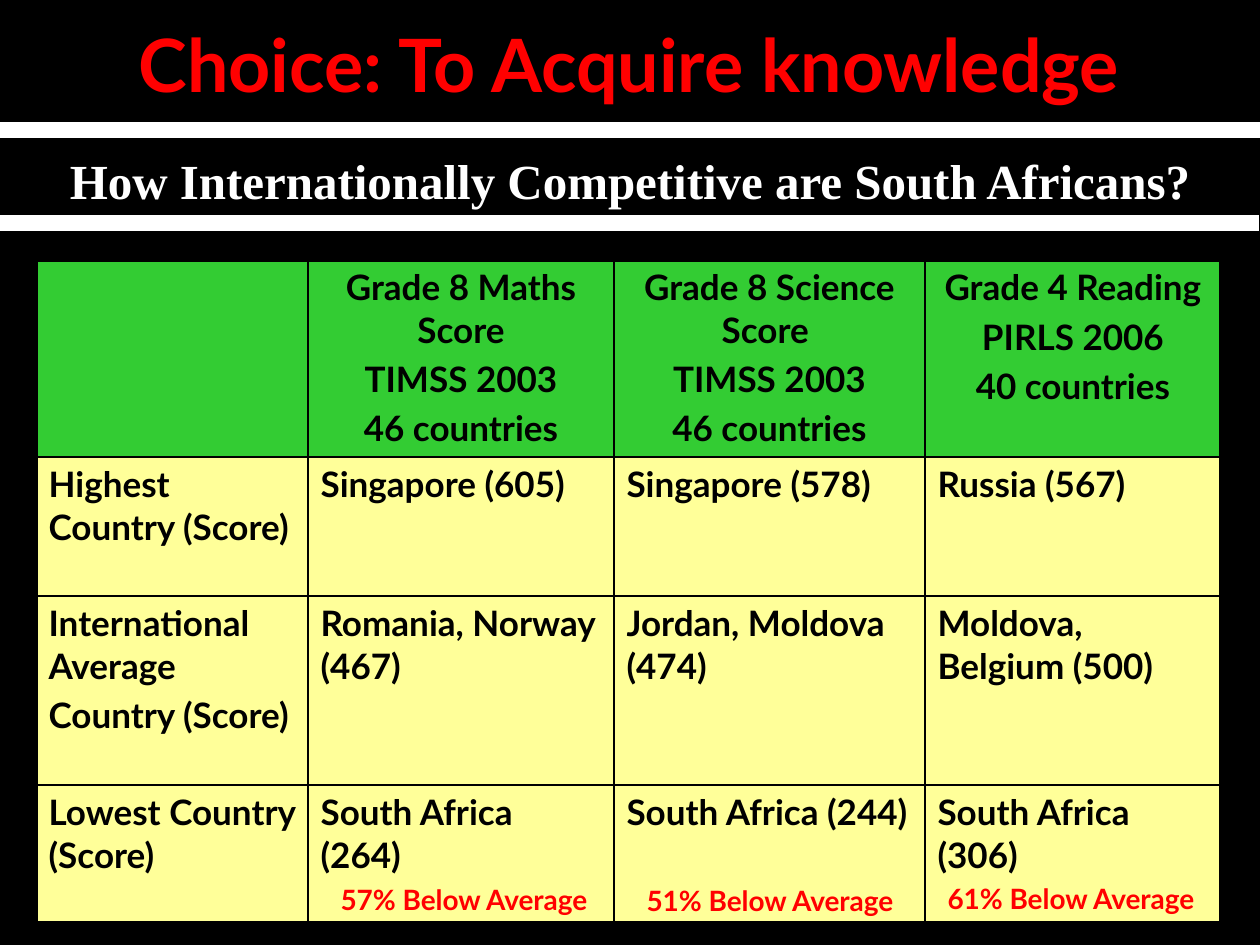
from lxml import etree
from pptx import Presentation
from pptx.dml.color import RGBColor
from pptx.enum.shapes import MSO_CONNECTOR
from pptx.enum.text import MSO_ANCHOR, PP_ALIGN
from pptx.oxml.ns import qn
from pptx.util import Emu, Pt

LEFT, CENTER = PP_ALIGN.LEFT, PP_ALIGN.CENTER
TOP, MIDDLE = MSO_ANCHOR.TOP, MSO_ANCHOR.MIDDLE
STRAIGHT = MSO_CONNECTOR.STRAIGHT
PX = 914400 / 126
COLORS = {
    "black": "000000",
    "white": "FFFFFF",
    "red": "FF0000",
    "green": "33CC33",
    "yellow": "FFFF99",
}
COLUMN_WIDTHS = [272, 306, 311, 296]
ROW_HEIGHTS = [197, 139, 189, 138]
SCORES = [
    ["", "Grade 8 Maths Score\nTIMSS 2003\n46 countries",
     "Grade 8 Science Score \nTIMSS 2003\n46 countries",
     "Grade 4 Reading\nPIRLS 2006\n40 countries"],
    ["Highest Country (Score)", "Singapore (605)", "Singapore (578)",
     "Russia (567)"],
    ["International Average\nCountry (Score)", "Romania, Norway (467)",
     "Jordan, Moldova (474)", "Moldova, Belgium (500)"],
    ["Lowest Country (Score)", "South Africa (264)", "South Africa (244)",
     "South Africa (306)"],
]
BELOW_AVERAGE = [
    (296, 876, "57% Below Average"),
    (602, 877, "51% Below Average"),
    (903, 875, "61% Below Average"),
]


def px(value):
    return Emu(round(value * PX))


def rgb(name):
    return RGBColor.from_string(COLORS[name])


def add_color(parent, name):
    etree.SubElement(parent, qn("a:srgbClr"), val=COLORS[name])


def write_text(frame, text, size=20, font="Lato", color="black", align=LEFT,
               anchor=TOP, space_before=0, line_spacing=1.0, shadow=False):
    """Write one bold paragraph for each line of text."""
    frame.word_wrap = True
    frame.vertical_anchor = anchor
    for index, line in enumerate(text.split("\n")):
        paragraph = frame.add_paragraph() if index else frame.paragraphs[0]
        paragraph.alignment = align
        paragraph.space_before = Pt(space_before)
        paragraph.line_spacing = line_spacing
        if not line:
            continue
        run = paragraph.add_run()
        run.text = line
        run.font.size = Pt(size)
        run.font.bold = True
        run.font.color.rgb = rgb(color)
        if shadow:
            add_text_shadow(run)
        run.font.name = font


def add_text_shadow(run):
    properties = run.font._element
    effects = etree.SubElement(properties, qn("a:effectLst"))
    outer = etree.SubElement(effects, qn("a:outerShdw"), blurRad="38100",
                             dist="38100", dir="2700000", algn="tl")
    add_color(outer, "black")


def set_borders(cell, widths):
    properties = cell._tc.get_or_add_tcPr()
    for side, width in widths.items():
        border = etree.SubElement(properties, qn(f"a:ln{side}"),
                                  w=str(Pt(width)))
        add_color(etree.SubElement(border, qn("a:solidFill")), "black")


class SlideBuilder:
    """Holds the slide and draws each kind of element in its style."""

    def __init__(self, presentation):
        self.slide = presentation.slides.add_slide(
            presentation.slide_layouts[5])
        fill = self.slide.background.fill
        fill.solid()
        fill.fore_color.rgb = rgb("black")

    def title(self, left, top, width, height, text, **style):
        title = self.slide.shapes.title
        title.left, title.top = px(left), px(top)
        title.width, title.height = px(width), px(height)
        write_text(title.text_frame, text, **style)

    def text_box(self, left, top, width, height, text, **style):
        box = self.slide.shapes.add_textbox(
            px(left), px(top), px(width), px(height))
        write_text(box.text_frame, text, **style)

    def rule(self, left, y, width):
        line = self.slide.shapes.add_connector(
            STRAIGHT, px(left), px(y), px(left + width), px(y))
        line.line.color.rgb = rgb("white")
        line.line.width = Pt(9)
        etree.SubElement(line._element.spPr, qn("a:effectLst"))

    def table(self, left, top, rows):
        last_row, last_column = len(ROW_HEIGHTS) - 1, len(COLUMN_WIDTHS) - 1
        table = self.slide.shapes.add_table(
            len(ROW_HEIGHTS), len(COLUMN_WIDTHS), px(left), px(top),
            px(sum(COLUMN_WIDTHS)), px(sum(ROW_HEIGHTS))).table
        table.first_row = table.horz_banding = False
        for column, width in zip(table.columns, COLUMN_WIDTHS):
            column.width = px(width)
        for row, height in zip(table.rows, ROW_HEIGHTS):
            row.height = px(height)
        for r, texts in enumerate(rows):
            for c, text in enumerate(texts):
                cell = table.cell(r, c)
                set_borders(cell, {
                    "L": 3 if c == 0 else 1,
                    "R": 3 if c == last_column else 1,
                    "T": 3 if r == 0 else 1,
                    "B": 3 if r == last_row else 1,
                })
                cell.fill.solid()
                cell.fill.fore_color.rgb = rgb("yellow" if r else "green")
                write_text(cell.text_frame, text, space_before=4,
                           align=LEFT if r else CENTER)


def main():
    presentation = Presentation()
    presentation.slide_width, presentation.slide_height = px(1260), px(945)
    builder = SlideBuilder(presentation)
    builder.title(24, 19, 1210, 97, "Choice: To Acquire knowledge", size=42,
                  color="red", align=CENTER, line_spacing=0.95)
    builder.text_box(0, 144, 1260, 72,
                     "How Internationally Competitive are South Africans?",
                     size=28, font="Times New Roman", color="white",
                     align=CENTER, anchor=MIDDLE)
    builder.rule(0, 130, 1260)
    builder.rule(-1, 223, 1260)
    builder.table(36, 260, SCORES)
    for left, top, text in BELOW_AVERAGE:
        builder.text_box(left, top, 336, 47, text, size=16, color="red",
                         align=CENTER, shadow=True)
    presentation.save("out.pptx")


if __name__ == "__main__":
    main()
